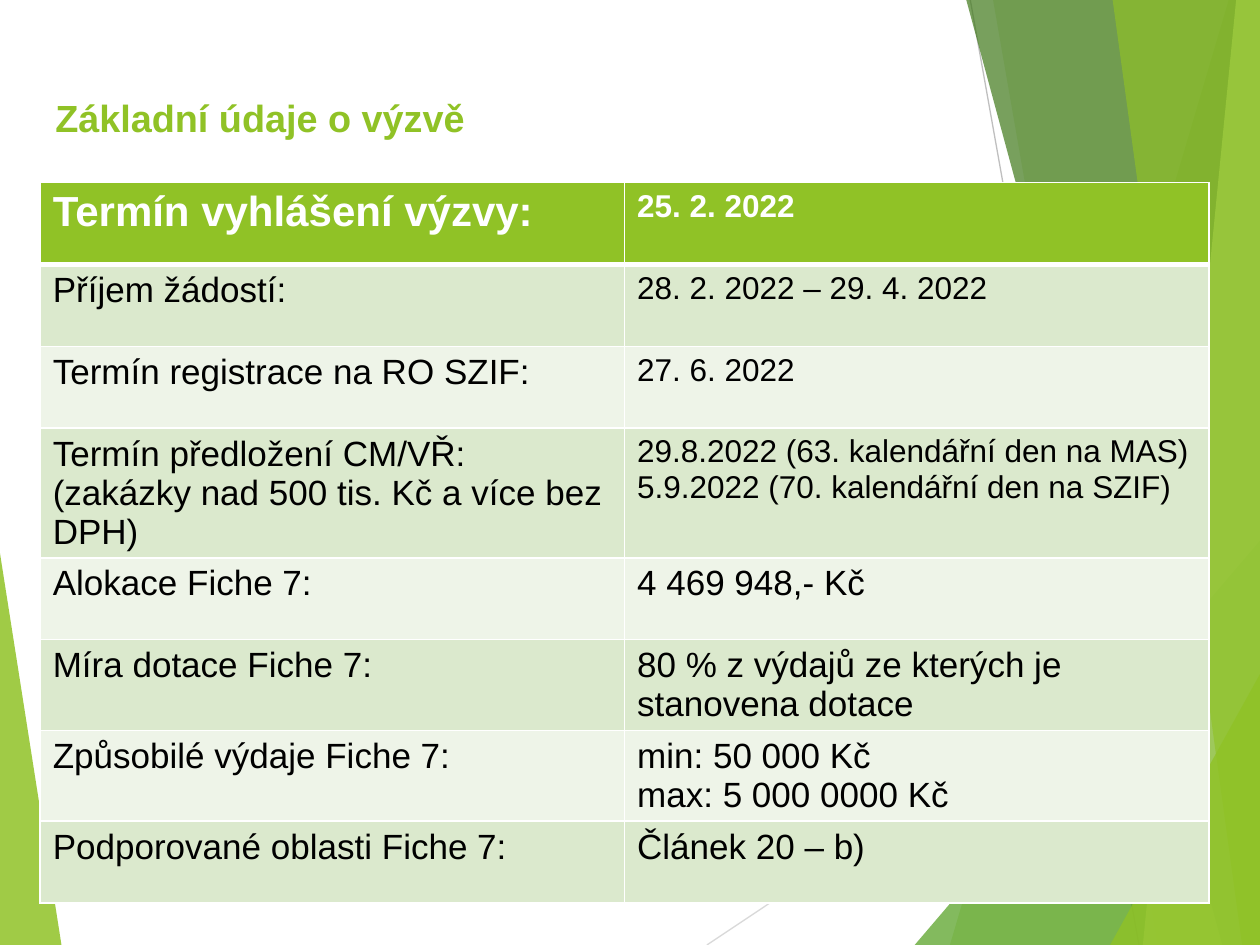
from dataclasses import dataclass

from lxml.etree import SubElement
from pptx import Presentation
from pptx.dml.color import RGBColor
from pptx.enum.shapes import MSO_CONNECTOR
from pptx.enum.text import MSO_ANCHOR, MSO_AUTO_SIZE, PP_ALIGN
from pptx.oxml.ns import qn
from pptx.slide import Slide
from pptx.table import _Cell
from pptx.util import Cm, Pt

WIDTH, HEIGHT = 25.4, 19.05  # cm
FONT = "Arial"
WHITE = RGBColor(0xFF, 0xFF, 0xFF)
BLACK = RGBColor(0x00, 0x00, 0x00)
GREEN = RGBColor(0x90, 0xC2, 0x26)
MID_GREEN = RGBColor(0x54, 0xA0, 0x21)
DARK_GREEN = RGBColor(0x3F, 0x78, 0x19)
LIME = RGBColor(0xC0, 0xE4, 0x74)
BAND_DARK = RGBColor(0xDB, 0xE9, 0xCD)
BAND_LIGHT = RGBColor(0xEE, 0xF4, 0xE8)
LIGHT_GREY = RGBColor(0xD9, 0xD9, 0xD9)
GREY = RGBColor(0xBF, 0xBF, 0xBF)

Point = tuple[float, float]


@dataclass
class Facet:
    points: list[Point]
    color: RGBColor
    opacity: int  # percent


@dataclass
class Ray:
    start: Point
    end: Point
    color: RGBColor


@dataclass
class Row:
    label: str
    value: str
    label_size: int = 20
    value_size: int = 20
    height: float = 1.65


def band(top_x: float, bottom_x: float) -> list[Point]:
    """Full-height area between a slanted edge and the right slide edge."""
    return [(top_x, 0), (bottom_x, HEIGHT), (WIDTH, HEIGHT), (WIDTH, 0)]


def corner(left: float, top: float) -> list[Point]:
    """Triangle in the bottom right corner."""
    return [(left, HEIGHT), (WIDTH, top), (WIDTH, HEIGHT)]


RAYS = [
    Ray((14.25, HEIGHT), (WIDTH, 11.61), LIGHT_GREY),
    Ray((19.56, 0), (22.96, HEIGHT), GREY),
]
FACETS = [
    Facet([(0, 11.15), (1.24, HEIGHT), (0, HEIGHT)], GREEN, 85),
    Facet(band(24.77, 19.15), GREEN, 30),
    Facet(band(20.02, 23.34), GREEN, 20),
    Facet(corner(18.44, 10.9), MID_GREEN, 72),
    Facet(band(19.48, 24.64), DARK_GREEN, 70),
    Facet(band(24.92, 23.04), LIME, 70),
    Facet(band(22.43, 25.04), GREEN, 65),
    Facet(corner(22.38, 13.59), GREEN, 80),
]
ROWS = [
    Row("Termín vyhlášení výzvy:", "25. 2. 2022", 24, 18),
    Row("Příjem žádostí:", "28. 2. 2022 – 29. 4. 2022", value_size=18),
    Row("Termín registrace na RO SZIF:", "27. 6. 2022", value_size=18),
    Row("Termín předložení CM/VŘ:\v(zakázky nad 500 tis. Kč a více bez DPH)",
        "29.8.2022 (63. kalendářní den na MAS)\n"
        "5.9.2022 (70. kalendářní den na SZIF)", value_size=18, height=2.11),
    Row("Alokace Fiche 7:", "4 469 948,- Kč"),
    Row("Míra dotace Fiche 7:", "80 % z výdajů ze kterých je stanovena dotace"),
    Row("Způsobilé výdaje Fiche 7:", "min: 50 000 Kč\nmax: 5 000 0000 Kč"),
    Row("Podporované oblasti Fiche 7:", "Článek 20 – b)"),
]


def draw_ray(page: Slide, ray: Ray) -> None:
    line = page.shapes.add_connector(
        MSO_CONNECTOR.STRAIGHT, *map(Cm, ray.start + ray.end))
    line.line.color.rgb = ray.color
    line.line.width = Pt(0.75)
    SubElement(line._element.spPr, qn("a:effectLst"))


def draw_facet(page: Slide, facet: Facet) -> None:
    corners = [(Cm(x), Cm(y)) for x, y in facet.points]
    builder = page.shapes.build_freeform(*corners[0])
    builder.add_line_segments(corners[1:], close=True)
    shape = builder.convert_to_shape()
    shape.shadow.inherit = False
    shape.line.fill.background()
    shape.fill.solid()
    shape.fill.fore_color.rgb = facet.color
    color = shape._element.spPr.find(qn("a:solidFill"))[0]
    SubElement(color, qn("a:alpha"), val=str(facet.opacity * 1000))


def place_title(page: Slide, text: str) -> None:
    title = page.shapes.title
    title.left, title.top, title.width, title.height = map(
        Cm, (0.86, 1.78, 22.86, 1.17))
    frame = title.text_frame
    frame.text = text
    frame.auto_size = MSO_AUTO_SIZE.NONE
    frame.vertical_anchor = MSO_ANCHOR.MIDDLE
    para = frame.paragraphs[0]
    para.alignment = PP_ALIGN.LEFT
    para.font.name, para.font.size, para.font.bold = FONT, Pt(21.6), True
    para.font.color.rgb = GREEN
    page.shapes._spTree.append(title._element)  # in front of the facets


def set_borders(cell: _Cell, top: float, bottom: float) -> None:
    properties = cell._tc.get_or_add_tcPr()
    widths = {"a:lnL": 1, "a:lnR": 1, "a:lnT": top, "a:lnB": bottom}
    for position, (tag, width) in enumerate(widths.items()):
        border = SubElement(properties, qn(tag), w=str(Pt(width)))
        fill = SubElement(border, qn("a:solidFill"))
        SubElement(fill, qn("a:srgbClr"), val=str(WHITE))
        properties.insert(position, border)  # borders go before the fill


def fill_cell(cell: _Cell, text: str, size: int, index: int) -> None:
    header = index == 0
    cell.fill.solid()
    cell.fill.fore_color.rgb = (
        GREEN if header else BAND_DARK if index % 2 else BAND_LIGHT)
    set_borders(cell, 3 if index == 1 else 1, 3 if header else 1)
    cell.text = text
    for para in cell.text_frame.paragraphs:
        para.font.name, para.font.size, para.font.bold = FONT, Pt(size), header
        para.font.color.rgb = WHITE if header else BLACK


def draw_table(page: Slide, rows: list[Row]) -> None:
    total = sum(row.height for row in rows)
    table = page.shapes.add_table(
        len(rows), 2, Cm(0.81), Cm(3.68), Cm(23.56), Cm(total)).table
    for index, row in enumerate(rows):
        table.rows[index].height = Cm(row.height)
        fill_cell(table.cell(index, 0), row.label, row.label_size, index)
        fill_cell(table.cell(index, 1), row.value, row.value_size, index)


def main() -> None:
    deck = Presentation()
    deck.slide_width, deck.slide_height = Cm(WIDTH), Cm(HEIGHT)
    page = deck.slides.add_slide(deck.slide_layouts[5])  # title only

    # Background decoration
    for ray in RAYS:
        draw_ray(page, ray)
    for facet in FACETS:
        draw_facet(page, facet)

    # Content
    place_title(page, "Základní údaje o výzvě")
    draw_table(page, ROWS)
    deck.save("out.pptx")


if __name__ == "__main__":
    main()
